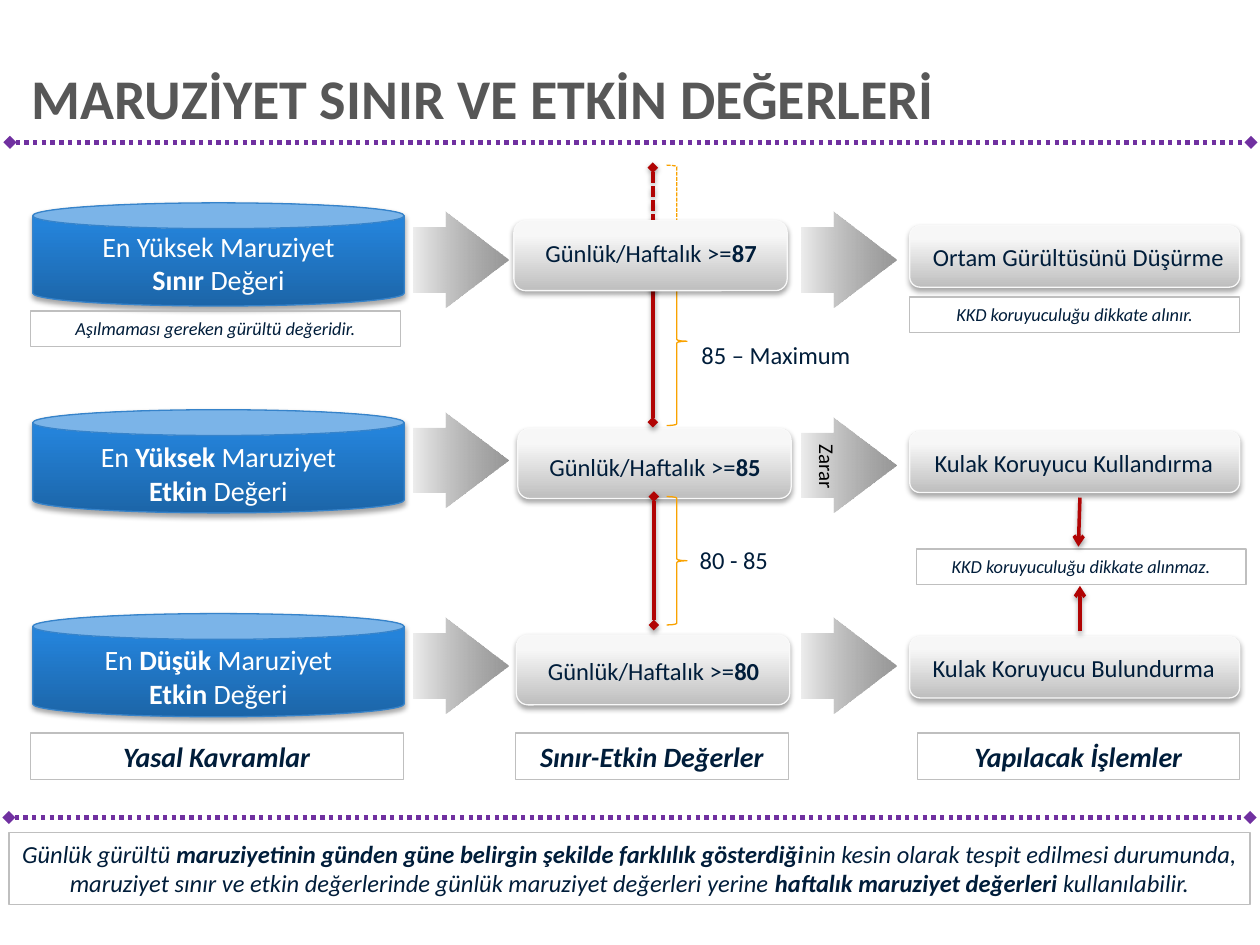
from dataclasses import dataclass

from lxml import etree
from pptx import Presentation
from pptx.dml.color import RGBColor
from pptx.enum.dml import MSO_LINE
from pptx.enum.shapes import MSO_CONNECTOR, MSO_SHAPE
from pptx.enum.text import MSO_ANCHOR, MSO_AUTO_SIZE, PP_ALIGN
from pptx.oxml.ns import qn
from pptx.util import Cm, Pt

CAN, ARROW, BRACE = MSO_SHAPE.CAN, MSO_SHAPE.RIGHT_ARROW, MSO_SHAPE.RIGHT_BRACE
ROUNDED, RECTANGLE = MSO_SHAPE.ROUNDED_RECTANGLE, MSO_SHAPE.RECTANGLE
DOTS, DASHES = MSO_LINE.ROUND_DOT, MSO_LINE.SQUARE_DOT
LEFT, CENTER = PP_ALIGN.LEFT, PP_ALIGN.CENTER
TOP, MIDDLE = MSO_ANCHOR.TOP, MSO_ANCHOR.MIDDLE
FIT, FIXED = MSO_AUTO_SIZE.SHAPE_TO_FIT_TEXT, MSO_AUTO_SIZE.NONE
STRAIGHT = MSO_CONNECTOR.STRAIGHT


@dataclass(frozen=True)
class Theme:
    font: str = "Calibri"
    title_color: str = "575757"
    ink: str = "001D3A"
    white: str = "FFFFFF"
    black: str = "000000"
    frame: str = "BFBFBF"
    rule: str = "7030A0"
    red: str = "B10404"
    brace: str = "F9A200"
    can_edge: str = "3683CA"
    box_edge: str = "F9F9F9"
    can_fill: tuple = ((0, "1C65A8", 100), (80, "2483DA", 100), (100, "2183DE", 100))
    box_fill: tuple = ((0, "BEBEBE", 100), (80, "F7F7F7", 100), (100, "F8F8F8", 100))
    arrow_fill: tuple = ((0, "6B6B6B", 12), (100, "969696", 100))
    title: float = 32
    large: float = 16
    body: float = 14
    small: float = 12
    note: float = 10.5


class Painter:
    def __init__(self, page, theme):
        self.shapes = page.shapes
        self.theme = theme

    def color(self, parent, value, alpha):
        node = etree.SubElement(parent, qn("a:srgbClr"), val=value)
        if alpha < 100:
            etree.SubElement(node, qn("a:alpha"), val=str(alpha * 1000))

    def effects(self, shape, shadow=None):
        effects = etree.SubElement(shape._element.spPr, qn("a:effectLst"))
        if shadow:
            alpha, blur, distance = shadow
            outer = etree.SubElement(
                effects, qn("a:outerShdw"), blurRad=str(Pt(blur)), dist=str(Pt(distance)),
                dir="5400000", rotWithShape="0")
            self.color(outer, self.theme.black, alpha)

    def gradient(self, shape, stops, angle):
        properties = shape._element.spPr
        fill = etree.Element(qn("a:gradFill"), rotWithShape="1")
        stop_list = etree.SubElement(fill, qn("a:gsLst"))
        for position, value, alpha in stops:
            stop = etree.SubElement(stop_list, qn("a:gs"), pos=str(position * 1000))
            self.color(stop, value, alpha)
        etree.SubElement(fill, qn("a:lin"), ang=str(angle * 60000), scaled="0")
        properties.replace(properties.find(qn("a:noFill")), fill)

    def stroke(self, shape, color, width, dash=None):
        shape.line.color.rgb = RGBColor.from_string(color)
        shape.line.width = Pt(width)
        if dash:
            shape.line.dash_style = dash

    def shape(self, kind, area, edge=None, stops=None, angle=270, shadow=None,
              dash=None, adjustments=()):
        shape = self.shapes.add_shape(kind, *map(Cm, area))
        for index, value in enumerate(adjustments):
            shape.adjustments[index] = value
        shape.fill.background()
        if stops:
            self.gradient(shape, stops, angle)
        if edge:
            self.stroke(shape, edge, 0.75, dash)
        else:
            shape.line.fill.background()
        self.effects(shape, shadow)
        return shape

    def label(self, shape, text, size, color=None, align=CENTER, anchor=TOP,
              bold=None, italic=None, fit=FIT, wrap=True):
        frame = shape.text_frame
        frame.word_wrap = wrap
        frame.auto_size = fit
        frame.vertical_anchor = anchor
        for index, line in enumerate(text.split("\n")):
            para = frame.paragraphs[0] if index == 0 else frame.add_paragraph()
            para.alignment = align
            font = para.font
            font.name, font.size = self.theme.font, Pt(size)
            font.bold, font.italic = bold, italic
            font.color.rgb = RGBColor.from_string(color or self.theme.ink)
            for part, words in enumerate(line.split("**")):
                if words:
                    span = para.add_run()
                    span.text = words
                    if part % 2:
                        span.font.bold = True
        return frame

    def text(self, area, text, size, **style):
        return self.label(self.shapes.add_textbox(*map(Cm, area)), text, size, **style)

    def framed(self, area, text, size, **style):
        box = self.shape(RECTANGLE, area, self.theme.frame)
        self.label(box, text, size, italic=True, **style)

    def can(self, top, text_top, text):
        self.shape(CAN, (0.66, top, 7.49, 2.08), self.theme.can_edge,
                   self.theme.can_fill, shadow=(35, 3.1, 1.8))
        self.text((0.66, text_top, 7.49, 1.63), text, self.theme.large,
                  color=self.theme.white)

    def arrow(self, left, top):
        return self.shape(ARROW, (left, top, 1.93, 1.93), stops=self.theme.arrow_fill,
                          angle=0, adjustments=(0.677, 0.662))

    def box(self, area, text_area, text):
        self.shape(ROUNDED, area, self.theme.box_edge, self.theme.box_fill,
                   shadow=(35, 3.1, 1.8))
        self.text(text_area, text, self.theme.body)

    def limit(self, left, top, text_top, value):
        self.box((left, top, 5.51, 1.41), (left + 0.15, text_top, 5.23, 0.86),
                 f"Günlük/Haftalık >=**{value}**")

    def brace(self, top, height, dash=None):
        self.shape(BRACE, (13.44, top, 0.41, height), self.theme.brace, dash=dash)

    def line(self, start, end, color, width, dash=None, head="diamond",
             tail="diamond", shadow=None):
        line = self.shapes.add_connector(STRAIGHT, *map(Cm, start + end))
        self.stroke(line, color, width, dash)
        outline = line.line._get_or_add_ln()
        for tag, kind in (("a:headEnd", head), ("a:tailEnd", tail)):
            if kind:
                etree.SubElement(outline, qn(tag), type=kind)
        self.effects(line, shadow)

    def red_line(self, start, end, **style):
        self.line(start, end, self.theme.red, 2, shadow=(38, 3.1, 1.6), **style)


def build():
    deck = Presentation()
    deck.slide_width, deck.slide_height = Cm(25.4), Cm(19.05)
    page = deck.slides.add_slide(deck.slide_layouts[6])
    theme = Theme()
    painter = Painter(page, theme)

    title = painter.text((0.64, 1.14, 24.49, 1.8), "MARUZİYET SINIR VE ETKİN DEĞERLERİ",
                         theme.title, color=theme.title_color, align=LEFT,
                         anchor=MIDDLE, bold=True, fit=FIXED)
    title.margin_left = title.margin_right = 0
    title.paragraphs[0].line_spacing = 0.9

    for top, text_top, concept in (
            (4.09, 4.5, "En Yüksek Maruziyet\n**Sınır** Değeri"),
            (8.26, 8.74, "En **Yüksek** Maruziyet\n**Etkin** Değeri"),
            (12.37, 12.83, "En **Düşük** Maruziyet\n**Etkin** Değeri")):
        painter.can(top, text_top, concept)

    for top in (4.27, 8.31, 12.45):
        painter.arrow(8.33, top)
    for top, harm in ((4.27, ""), (8.41, "Zarar"), (12.45, "")):
        arrow = painter.arrow(16.15, top)
        if harm:
            frame = painter.label(arrow, harm, theme.small, color=theme.black,
                                  align=LEFT, anchor=MIDDLE, fit=FIXED, wrap=False)
            frame._txBody.bodyPr.set("vert", "vert")

    painter.limit(10.44, 8.64, 8.99, 85)
    painter.limit(10.41, 12.8, 13.11, 80)

    for top, width, action in ((4.55, 6.5, "Ortam Gürültüsünü Düşürme"),
                               (8.69, 6.32, "Kulak Koruyucu Kullandırma"),
                               (12.83, 6.32, "Kulak Koruyucu Bulundurma")):
        painter.box((18.34, top, 6.65, 1.24), (18.49, top + 0.21, width, 0.86), action)

    painter.red_line((13.16, 5.21), (13.16, 8.51))
    painter.red_line((13.18, 10.01), (13.18, 12.6))
    painter.red_line((13.16, 3.38), (13.16, 5.77), dash=DASHES)
    painter.brace(5.18, 3.4)
    painter.brace(10.01, 2.59)
    painter.brace(3.33, 2.49, DASHES)
    painter.text((13.84, 10.87, 1.91, 0.86), "80 - 85", theme.body)
    painter.text((13.89, 6.73, 4.19, 0.86), "85 – Maximum", theme.body, align=LEFT)
    painter.limit(10.36, 4.45, 4.67, 87)

    for left, width, heading in ((0.61, 7.52, "Yasal Kavramlar"),
                                 (10.39, 5.51, "Sınır-Etkin Değerler"),
                                 (18.49, 6.5, "Yapılacak İşlemler")):
        painter.framed((left, 14.78, width, 0.94), heading, theme.large, bold=True)

    for left, top, width, note in (
            (0.61, 6.27, 7.47, "Aşılmaması gereken gürültü değeridir."),
            (18.34, 5.99, 6.65, "KKD koruyuculuğu dikkate alınır."),
            (18.47, 11.07, 6.65, "KKD koruyuculuğu dikkate alınmaz.")):
        painter.framed((left, top, width, 0.71), note, theme.note)

    painter.red_line((21.77, 10.03), (21.74, 11.02), head=None, tail="arrow")
    painter.red_line((21.77, 12.73), (21.77, 11.81), head=None, tail="arrow")

    for left, top in ((0.2, 2.87), (0.18, 16.48)):
        painter.line((left, top), (left + 25.02, top), theme.rule, 2.5, dash=DOTS)

    painter.framed(
        (0.18, 16.79, 25.02, 1.45),
        "Günlük gürültü **maruziyetinin günden güne belirgin şekilde farklılık gösterdiği**"
        "nin kesin olarak tespit edilmesi durumunda, maruziyet sınır ve etkin değerlerinde "
        "günlük maruziyet değerleri yerine **haftalık maruziyet değerleri **kullanılabilir.",
        theme.body)

    deck.save("out.pptx")


if __name__ == "__main__":
    build()
